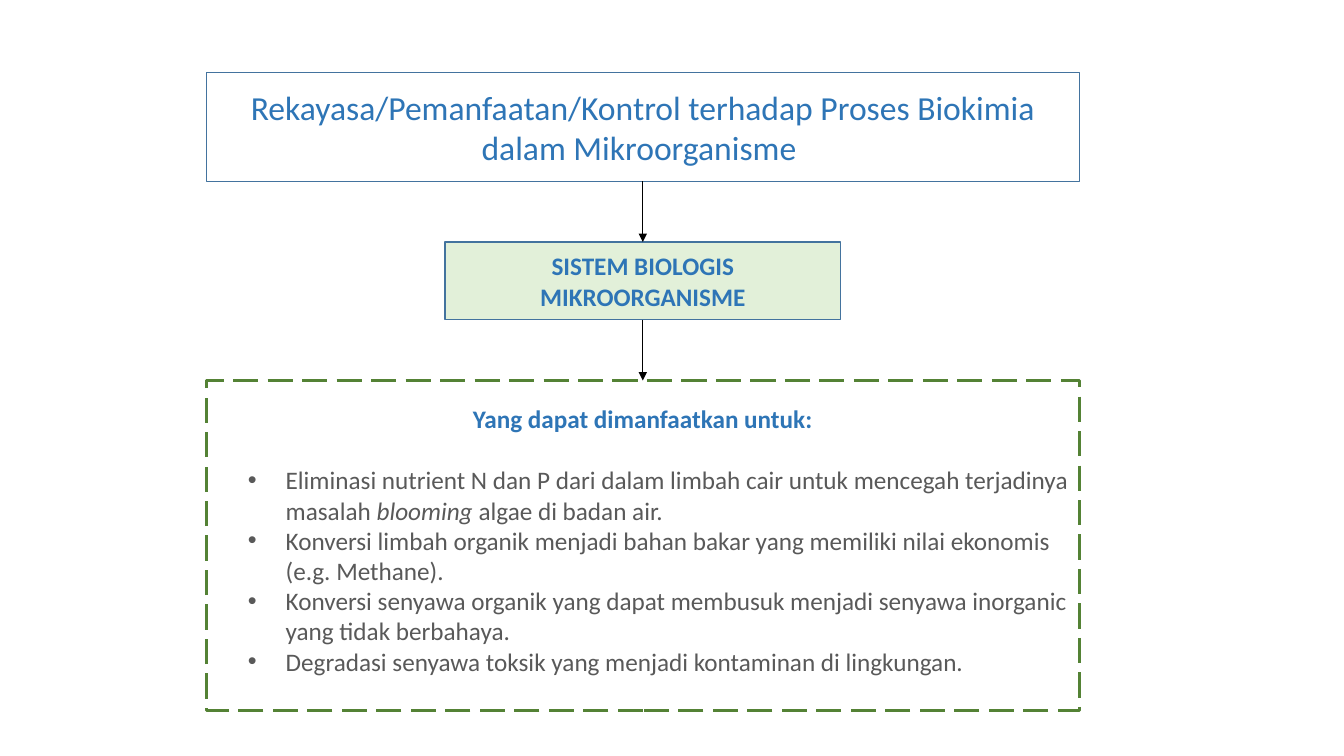
"""Build a slide with a three-step flow on using microorganisms."""
from lxml import etree
from pptx import Presentation
from pptx.dml.color import RGBColor
from pptx.enum.dml import MSO_LINE
from pptx.enum.shapes import MSO_CONNECTOR, MSO_SHAPE
from pptx.enum.text import MSO_ANCHOR, PP_ALIGN
from pptx.oxml.ns import qn
from pptx.util import Cm, Pt

RECTANGLE = MSO_SHAPE.RECTANGLE
STRAIGHT = MSO_CONNECTOR.STRAIGHT
LONG_DASH = MSO_LINE.LONG_DASH
TOP, MIDDLE = MSO_ANCHOR.TOP, MSO_ANCHOR.MIDDLE
LEFT, CENTER = PP_ALIGN.LEFT, PP_ALIGN.CENTER

FONT = "Calibri"
BLUE, GRAY, BLACK = "2E75B6", "595959", "000000"
BORDER, GREEN, PALE_GREEN = "43739E", "548235", "E2F0D9"

TOPIC = "Rekayasa/Pemanfaatan/Kontrol terhadap Proses Biokimia dalam Mikroorganisme "
SYSTEM = "SISTEM BIOLOGIS MIKROORGANISME"
USES_HEADING = "Yang dapat dimanfaatkan untuk:"
USES = [
    [("Eliminasi nutrient N dan P dari dalam limbah cair untuk mencegah "
      "terjadinya masalah ", False),
     ("blooming ", True),
     ("algae di badan air.", False)],
    [("Konversi limbah organik menjadi bahan bakar yang memiliki nilai "
      "ekonomis (e.g. Methane).", False)],
    [("Konversi senyawa organik yang dapat membusuk menjadi senyawa "
      "inorganic yang tidak berbahaya.", False)],
    [("Degradasi senyawa toksik yang menjadi kontaminan di lingkungan.", False)],
]

CENTER_X = 16.2
FIRST_TOP = 1.83
GAP = 1.53
WIDE, NARROW = 22, 9.96
TOPIC_HEIGHT, SYSTEM_HEIGHT, USES_HEIGHT = 2.74, 1.96, 8.31


def color(value):
    return RGBColor.from_string(value)


def add_box(slide, top, width, height, border, border_width, fill=None, anchor=MIDDLE):
    shape = slide.shapes.add_shape(
        RECTANGLE, Cm(CENTER_X - width / 2), Cm(top), Cm(width), Cm(height))
    shape.shadow.inherit = False
    if fill:
        shape.fill.solid()
        shape.fill.fore_color.rgb = color(fill)
    else:
        shape.fill.background()
    shape.line.color.rgb = color(border)
    shape.line.width = Pt(border_width)
    shape.text_frame.word_wrap = True
    shape.text_frame.vertical_anchor = anchor
    return shape


def style_paragraph(paragraph, size, text_color, bold=False, alignment=CENTER):
    paragraph.alignment = alignment
    paragraph.font.name = FONT
    paragraph.font.size = Pt(size)
    paragraph.font.bold = bold
    paragraph.font.color.rgb = color(text_color)


def write_heading(shape, text, size, bold=False):
    paragraph = shape.text_frame.paragraphs[0]
    paragraph.add_run().text = text
    style_paragraph(paragraph, size, BLUE, bold)
    return paragraph


def add_bullet(text_frame, runs):
    paragraph = text_frame.add_paragraph()
    style_paragraph(paragraph, 18, GRAY, alignment=LEFT)
    for text, italic in runs:
        run = paragraph.add_run()
        run.text = text
        if italic:
            run.font.italic = True
    properties = paragraph._p.get_or_add_pPr()
    properties.set("marL", str(Cm(1.75)))
    properties.set("indent", str(-Cm(0.95)))
    bullet_font = etree.Element(qn("a:buFont"), typeface="Arial")
    bullet = etree.Element(qn("a:buChar"), char="•")
    properties.insert_element_before(bullet_font, "a:defRPr")
    properties.insert_element_before(bullet, "a:defRPr")


def add_arrow(slide, bottom):
    arrow = slide.shapes.add_connector(
        STRAIGHT, Cm(CENTER_X), Cm(bottom - GAP), Cm(CENTER_X), Cm(bottom))
    arrow.line.color.rgb = color(BLACK)
    arrow.line.width = Pt(0.5)
    etree.SubElement(arrow.line._get_or_add_ln(), qn("a:tailEnd"), type="triangle")
    etree.SubElement(arrow._element.spPr, qn("a:effectLst"))


def main():
    presentation = Presentation()
    presentation.slide_width = Cm(33.87)
    presentation.slide_height = Cm(19.05)
    slide = presentation.slides.add_slide(presentation.slide_layouts[6])

    system_top = FIRST_TOP + TOPIC_HEIGHT + GAP
    uses_top = system_top + SYSTEM_HEIGHT + GAP

    topic_box = add_box(slide, FIRST_TOP, WIDE, TOPIC_HEIGHT, BORDER, 1)
    write_heading(topic_box, TOPIC, 24)

    system_box = add_box(slide, system_top, NARROW, SYSTEM_HEIGHT, BORDER, 1, PALE_GREEN)
    write_heading(system_box, SYSTEM, 18, bold=True)

    uses_box = add_box(slide, uses_top, WIDE, USES_HEIGHT, GREEN, 2.25, anchor=TOP)
    uses_box.line.dash_style = LONG_DASH
    uses_box.text_frame.margin_top = Cm(0.58)
    heading = write_heading(uses_box, USES_HEADING, 18, bold=True)
    heading.space_after = Pt(22)
    for runs in USES:
        add_bullet(uses_box.text_frame, runs)

    for arrow_bottom in (system_top, uses_top):
        add_arrow(slide, arrow_bottom)

    presentation.save("out.pptx")


if __name__ == "__main__":
    main()
